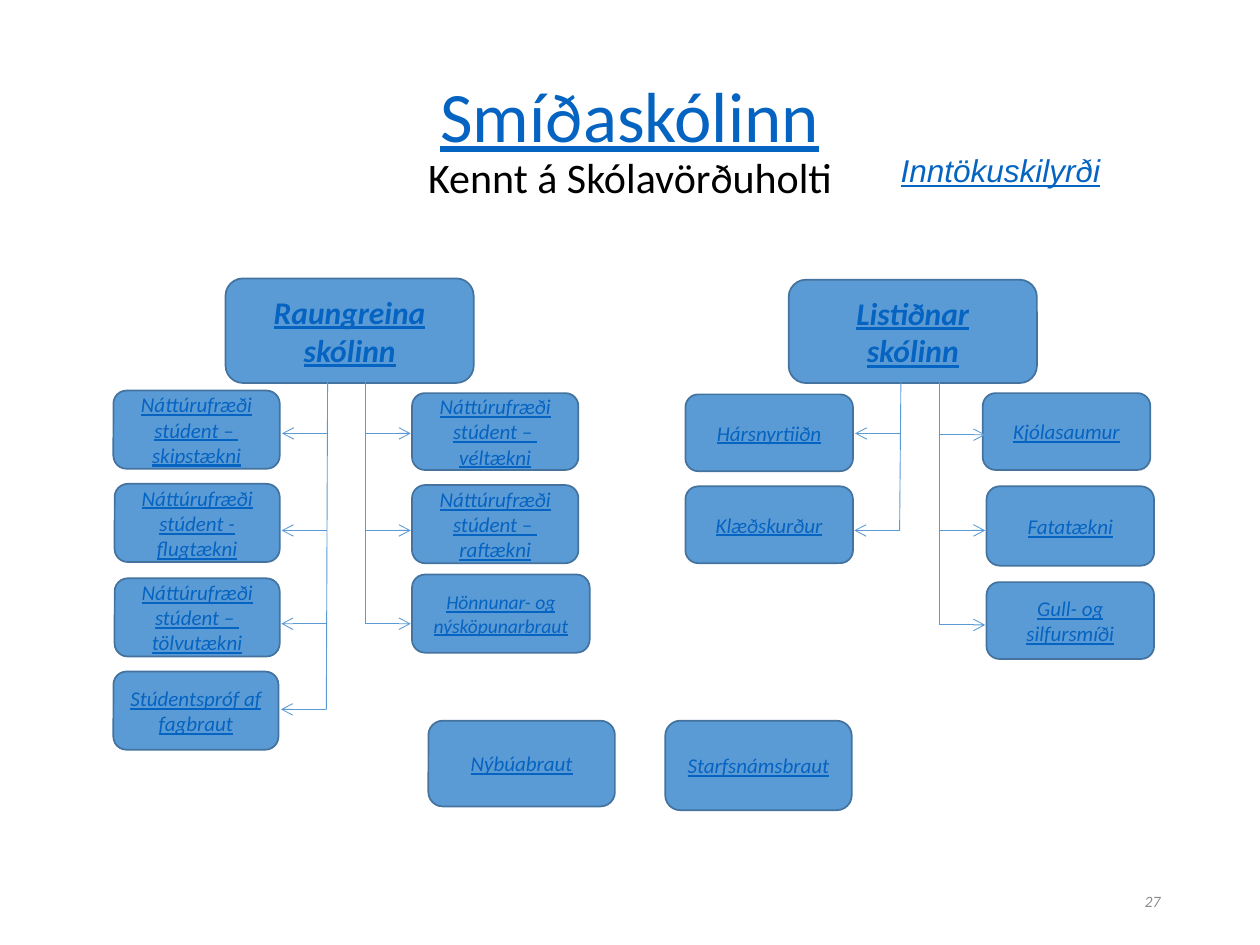
import pptx
import pptx.util
import pptx.dml.color
import pptx.enum.shapes
import pptx.enum.text
import pptx.oxml
import pptx.oxml.ns

Inches = pptx.util.Inches
Pt = pptx.util.Pt
RGBColor = pptx.dml.color.RGBColor
PP_ALIGN = pptx.enum.text.PP_ALIGN
ANCHOR = pptx.enum.text.MSO_ANCHOR
SHAPE = pptx.enum.shapes.MSO_SHAPE

BOX_BLUE = RGBColor(0x5B, 0x9B, 0xD5)
BORDER_BLUE = RGBColor(0x43, 0x73, 0x9E)
LINK_BLUE = RGBColor(0x05, 0x63, 0xC1)
BLACK = RGBColor(0, 0, 0)
GREY = RGBColor(0x8C, 0x8C, 0x8C)

LINK = {"name": "Calibri", "size": Pt(12), "italic": True, "underline": True}
SCHOOL_LINK = {**LINK, "size": Pt(18), "bold": True}
SMALL_LINK = {**LINK, "size": Pt(11.2)}

ARROW_LENGTH = 0.36

# Each box: lines of text, left, top, width, height
SCHOOLS = [
    (["Raungreina", "skólinn"], 1.79, 2.21, 1.97, 0.83),
    (["Listiðnar", "skólinn"], 6.26, 2.22, 1.97, 0.82),
]
PROGRAMMES = [
    (["Náttúrufræði stúdent – ", "skipstækni"], 0.9, 3.1, 1.32, 0.62),
    (["Náttúrufræði stúdent - flugtækni"], 0.91, 3.84, 1.31, 0.62),
    (["Náttúrufræði stúdent – ", "tölvutækni"], 0.91, 4.59, 1.31, 0.62),
    (["Stúdentspróf af fagbraut"], 0.9, 5.33, 1.31, 0.62),
    (["Náttúrufræði stúdent – ", "véltækni"], 3.27, 3.12, 1.32, 0.61),
    (["Náttúrufræði stúdent – ", "raftækni"], 3.27, 3.85, 1.32, 0.62),
    (["Hársnyrtiiðn"], 5.44, 3.13, 1.33, 0.61),
    (["Klæðskurður"], 5.44, 3.86, 1.33, 0.61),
    (["Kjólasaumur"], 7.8, 3.12, 1.33, 0.61),
    (["Fatatækni"], 7.83, 3.86, 1.33, 0.63),
    (["Gull- og silfursmíði"], 7.83, 4.62, 1.33, 0.61),
    (["Nýbúabraut"], 3.4, 5.72, 1.48, 0.68),
    (["Starfsnámsbraut"], 5.28, 5.72, 1.48, 0.71),
]
DESIGN_PROGRAMME = (["Hönnunar- og nýsköpunarbraut"], 3.27, 4.56, 1.41, 0.62)

# Each branch: stem x at top and bottom, direction of arrows, arrow heights
BRANCHES = [
    (2.6, 2.59, -1, [3.44, 4.21, 4.95, 5.63]),
    (2.9, 2.9, 1, [3.44, 4.21, 4.95]),
    (7.15, 7.14, -1, [3.44, 4.21]),
    (7.46, 7.46, 1, [3.45, 4.21, 4.96]),
]
STEM_TOP = 3.02


def add_run(paragraph, text, colour, font_format):
    run = paragraph.add_run()
    run.text = text
    for attribute, value in font_format.items():
        setattr(run.font, attribute, value)
    run.font.color.rgb = colour


def add_text(slide, left, top, width, height, align, anchor):
    """Add a wrapping text box and return its first paragraph."""
    box = slide.shapes.add_textbox(
        Inches(left), Inches(top), Inches(width), Inches(height))
    box.text_frame.word_wrap = True
    box.text_frame.vertical_anchor = anchor
    paragraph = box.text_frame.paragraphs[0]
    paragraph.alignment = align
    return paragraph


def add_box(slide, lines, left, top, width, height, font_format):
    box = slide.shapes.add_shape(
        SHAPE.ROUNDED_RECTANGLE,
        Inches(left), Inches(top), Inches(width), Inches(height))
    box.shadow.inherit = False
    box.fill.solid()
    box.fill.fore_color.rgb = BOX_BLUE
    box.line.color.rgb = BORDER_BLUE
    box.line.width = Pt(1)
    frame = box.text_frame
    frame.word_wrap = True
    frame.vertical_anchor = ANCHOR.MIDDLE
    frame.margin_left = frame.margin_right = Inches(0.08)
    for index, line in enumerate(lines):
        paragraph = frame.add_paragraph() if index else frame.paragraphs[0]
        paragraph.alignment = PP_ALIGN.CENTER
        add_run(paragraph, line, LINK_BLUE, font_format)


def add_line(slide, x1, y1, x2, y2, arrow=False):
    line = slide.shapes.add_connector(
        pptx.enum.shapes.MSO_CONNECTOR.STRAIGHT,
        Inches(x1), Inches(y1), Inches(x2), Inches(y2))
    line.line.color.rgb = BOX_BLUE
    line.line.width = Pt(0.5)
    if arrow:
        head = pptx.oxml.parse_xml(
            f'<a:tailEnd {pptx.oxml.ns.nsdecls("a")} type="arrow"/>')
        line.line._get_or_add_ln().append(head)
    properties = line._element.spPr
    properties.append(pptx.oxml.parse_xml(
        f'<a:effectLst {pptx.oxml.ns.nsdecls("a")}/>'))


def add_branch(slide, top_x, bottom_x, direction, heights):
    """Draw a stem under a school with an arrow to each programme."""
    bottom = heights[-1]
    add_line(slide, top_x, STEM_TOP, bottom_x, bottom)
    for y in heights:
        share = (y - STEM_TOP) / (bottom - STEM_TOP)
        x = top_x + (bottom_x - top_x) * share
        add_line(slide, x, y, x + direction * ARROW_LENGTH, y, arrow=True)


def main():
    presentation = pptx.Presentation()
    presentation.slide_width = Inches(10)
    presentation.slide_height = Inches(7.5)
    slide = presentation.slides.add_slide(presentation.slide_layouts[6])

    # Title and subtitle
    title = add_text(slide, 0.69, 0.4, 8.62, 1.45, PP_ALIGN.CENTER, ANCHOR.MIDDLE)
    title.line_spacing = 0.9
    add_run(title, "Smíðaskólinn", LINK_BLUE,
            {"name": "Calibri", "size": Pt(40.5), "underline": True})
    title.add_line_break()
    add_run(title, "Kennt á Skólavörðuholti", BLACK,
            {"name": "Calibri", "size": Pt(24)})

    # Schools, programmes and the branches between them
    for school in SCHOOLS:
        add_box(slide, *school, SCHOOL_LINK)
    for programme in PROGRAMMES:
        add_box(slide, *programme, LINK)
    add_box(slide, *DESIGN_PROGRAMME, SMALL_LINK)
    for branch in BRANCHES:
        add_branch(slide, *branch)

    # Admission requirements
    admission = add_text(slide, 7.05, 1.15, 1.81, 0.4, PP_ALIGN.LEFT, ANCHOR.TOP)
    add_run(admission, "Inntökuskilyrði", LINK_BLUE,
            {**LINK, "name": "Arial", "size": Pt(18)})

    # Page number
    page_number = add_text(slide, 7.06, 6.95, 2.25, 0.4, PP_ALIGN.RIGHT, ANCHOR.MIDDLE)
    add_run(page_number, "27", GREY,
            {"name": "Calibri", "size": Pt(9), "italic": True})

    presentation.save("out.pptx")


if __name__ == "__main__":
    main()
